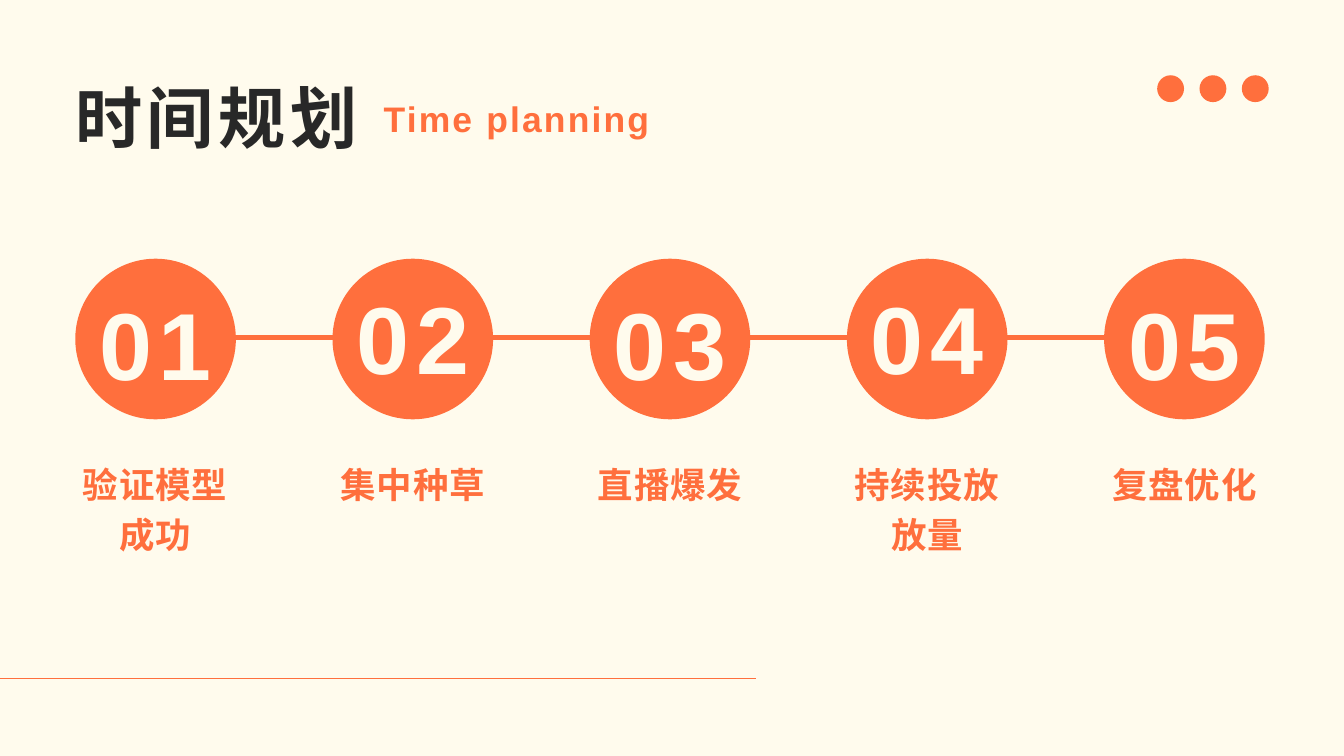
from pptx import Presentation
from pptx.dml.color import RGBColor
from pptx.enum.shapes import MSO_CONNECTOR, MSO_SHAPE
from pptx.enum.text import MSO_AUTO_SIZE, PP_ALIGN
from pptx.oxml.ns import qn
from pptx.util import Inches, Pt
from lxml import etree

OVAL = MSO_SHAPE.OVAL
STRAIGHT = MSO_CONNECTOR.STRAIGHT
GROW = MSO_AUTO_SIZE.SHAPE_TO_FIT_TEXT
LEFT, CENTER = PP_ALIGN.LEFT, PP_ALIGN.CENTER

COLORS = {"cream": "FFFBED", "orange": "FF6F3D", "ink": "282828"}
CHINESE, LATIN = "Noto Sans CJK SC", "Arial"


class SlideBuilder:
    def __init__(self, slide):
        self.slide = slide

    def color(self, name):
        return RGBColor.from_string(COLORS[name])

    def background(self, color):
        fill = self.slide.background.fill
        fill.solid()
        fill.fore_color.rgb = self.color(color)

    def circle(self, left, top, diameter):
        shape = self.slide.shapes.add_shape(
            OVAL, Inches(left), Inches(top), Inches(diameter), Inches(diameter))
        shape.shadow.inherit = False
        shape.fill.solid()
        shape.fill.fore_color.rgb = self.color("orange")
        shape.line.fill.background()

    def horizontal_line(self, start, end, y, width):
        connector = self.slide.shapes.add_connector(
            STRAIGHT, Inches(start), Inches(y), Inches(end), Inches(y))
        connector.line.color.rgb = self.color("orange")
        connector.line.width = Pt(width)
        properties = connector._element.spPr
        etree.SubElement(properties, qn("a:effectLst"))

    def text(self, content, box, size, line_height, spacing,
             font=CHINESE, color="orange", align=LEFT):
        shape = self.slide.shapes.add_textbox(*map(Inches, box))
        frame = shape.text_frame
        frame.word_wrap = True
        frame.auto_size = GROW
        frame.margin_left = frame.margin_right = 0
        frame.margin_top = frame.margin_bottom = 0
        paragraph = frame.paragraphs[0]
        paragraph.alignment = align
        paragraph.line_spacing = Pt(line_height)
        paragraph.font.name = font
        paragraph.font.size = Pt(size)
        paragraph.font.bold = True
        paragraph.font.color.rgb = self.color(color)
        run = paragraph.add_run()
        run.text = content
        # Letter spacing and the East Asian typeface
        properties = run._r.get_or_add_rPr()
        properties.set("spc", str(round(spacing * 100)))
        etree.SubElement(properties, qn("a:ea"), typeface=font)


def main():
    presentation = Presentation()
    presentation.slide_width = Inches(20)
    presentation.slide_height = Inches(11.25)
    slide = presentation.slides.add_slide(presentation.slide_layouts[6])
    builder = SlideBuilder(slide)
    builder.background("cream")

    # Timeline axis and footer rule
    builder.horizontal_line(2.14, 18.67, 5.02, 6)
    builder.horizontal_line(0, 11.25, 10.1, 1.5)

    # Steps: label, label width, label height
    steps = [
        ("验证模型成功", 2.62, 1.48),
        ("集中种草", 3.45, 0.74),
        ("直播爆发", 2.62, 0.74),
        ("持续投放放量", 2.62, 1.48),
        ("复盘优化", 2.62, 0.74),
    ]
    diameter, first_left, last_left = 2.39, 1.12, 16.43
    pitch = (last_left - first_left) / (len(steps) - 1)
    number_width = 2.01
    for index, (label, width, height) in enumerate(steps):
        left = first_left + index * pitch
        center = left + diameter / 2
        builder.circle(left, 3.85, diameter)
        number_top = 4.15 if index % 2 else 4.23
        builder.text(f"{index + 1:02d}",
                     (center - number_width / 2, number_top, number_width, 1.71),
                     102, 123.3, 7.3, LATIN, "cream", CENTER)
        builder.text(label, (center - width / 2, 6.79, width, height),
                     38, 53.2, 0.9, align=CENTER)

    # Title and subtitle
    builder.text("时间规划", (1.12, 1.15, 5.17, 1.18), 72, 85, 4.8, color="ink")
    builder.text("Time planning", (5.71, 1.52, 4.29, 0.55), 38, 39.9, 2.3, LATIN)

    # Corner dots
    for index in range(3):
        builder.circle(17.22 + index * 0.63, 1.12, 0.4)

    presentation.save("out.pptx")


if __name__ == "__main__":
    main()
